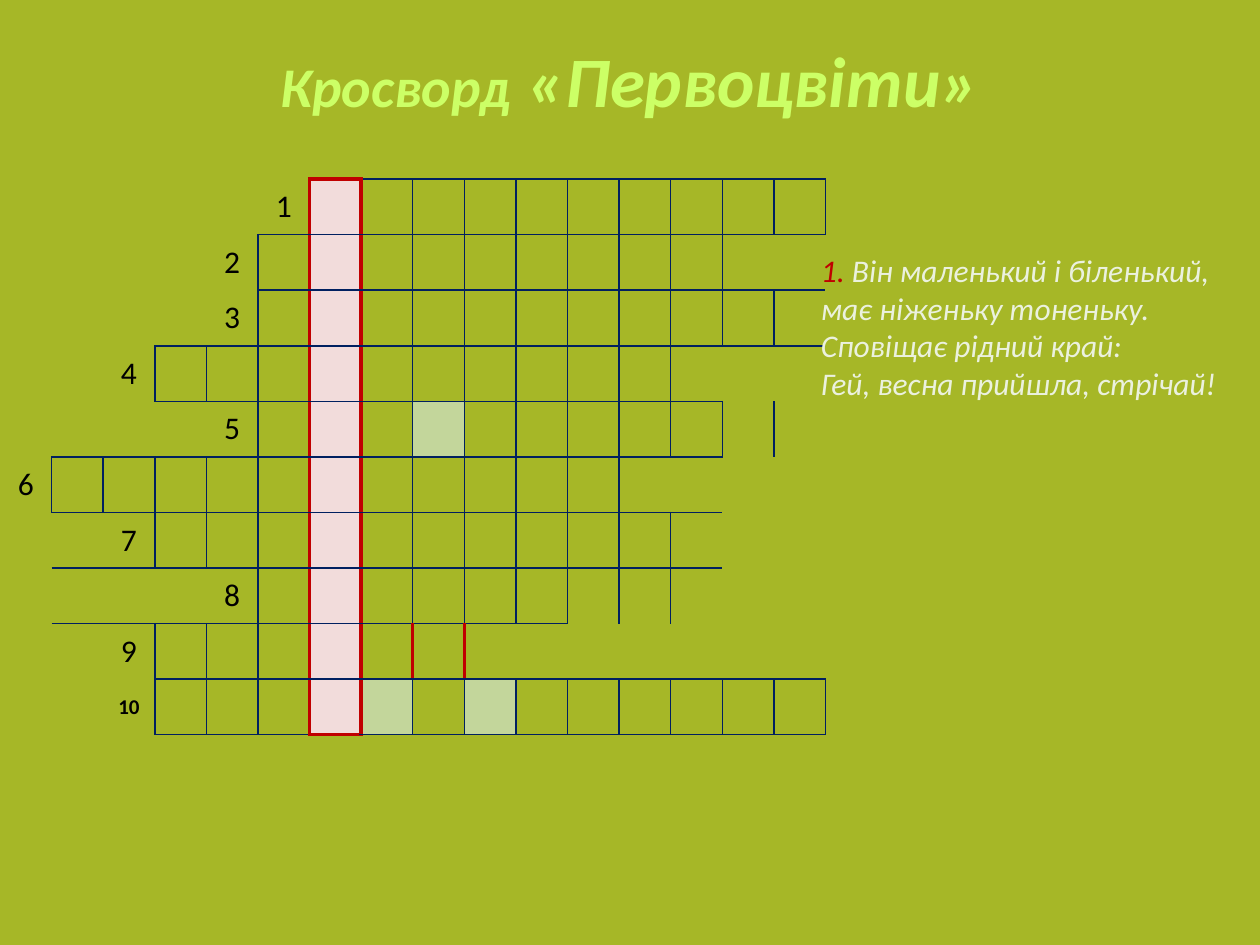
import pptx
import pptx.util
import pptx.dml.color
import pptx.enum.text
import lxml.etree

Cm, Pt = pptx.util.Cm, pptx.util.Pt
ALIGN = pptx.enum.text.PP_ALIGN
ANCHOR = pptx.enum.text.MSO_ANCHOR
NAVY, RED = ("002060", 1), ("C00000", 2.25)
A = "http://schemas.openxmlformats.org/drawingml/2006/main"


def rgb(code):
    return pptx.dml.color.RGBColor.from_string(code)


def style(run, size, code, bold=False, italic=False):
    font = run.font
    font.name, font.size = "Calibri", Pt(size)
    font.bold, font.italic = bold, italic
    font.color.rgb = rgb(code)


deck = pptx.Presentation()
deck.slide_width, deck.slide_height = Cm(25.4), Cm(19.05)
slide = deck.slides.add_slide(deck.slide_layouts[5])
slide.background.fill.solid()
slide.background.fill.fore_color.rgb = rgb("A6B727")

# Crossword: first and last boxed column of each word
words = [(6, 15), (5, 12), (5, 12), (3, 11), (5, 13),
         (1, 10), (3, 10), (5, 10), (3, 7), (3, 15)]
key, cols, rows = 6, 16, len(words)
tints = {(4, 8): "C3D69B", (9, 7): "C3D69B", (9, 9): "C3D69B"}

# Edges: upright by (row, x), level by (y, column)
upright, level = {}, {}
for row, (first, last) in enumerate(words):
    for col in range(first, last + 1):
        level[row, col] = level[row + 1, col] = NAVY
        upright[row, col] = upright[row, col + 1] = NAVY
    upright[row, key] = upright[row, key + 1] = RED
    tints[row, key] = "F2DCDB"
level[0, key] = level[rows, key] = RED

# Loose lines beyond the words
for y, first, last in [(2, 13, 15), (6, 11, 13), (7, 1, 2)]:
    for col in range(first, last + 1):
        level[y, col] = NAVY
for row, x in [(2, 14), (4, 15), (6, 12), (7, 12)]:
    upright[row, x] = NAVY
upright[8, 8] = RED

# Table
table = slide.shapes.add_table(rows, cols, Cm(0), Cm(3.61),
                               Cm(1.04 * cols), Cm(1.12 * rows)).table
table.first_row = table.horz_banding = False
table._tbl.tblPr[0].text = "{2D5ABB26-0587-4C30-8999-92F81FD0307C}"
for col in table.columns:
    col.width = Cm(1.04)
for line in table.rows:
    line.height = Cm(1.12)

for row in range(rows):
    for col in range(cols):
        cell = table.cell(row, col)
        props = cell._tc.get_or_add_tcPr()
        sides = {"lnL": upright.get((row, col)),
                 "lnR": upright.get((row, col + 1)),
                 "lnT": level.get((row, col)),
                 "lnB": level.get((row + 1, col))}
        for tag, pen in sides.items():
            if pen:
                edge = lxml.etree.SubElement(props, f"{{{A}}}{tag}", w=str(Pt(pen[1])))
                fill = lxml.etree.SubElement(edge, f"{{{A}}}solidFill")
                lxml.etree.SubElement(fill, f"{{{A}}}srgbClr", val=pen[0])
        if (row, col) in tints:
            cell.fill.solid()
            cell.fill.fore_color.rgb = rgb(tints[row, col])
        else:
            cell.fill.background()

# Word numbers, just left of each word
for row, (first, last) in enumerate(words):
    cell = table.cell(row, first - 1)
    cell.vertical_anchor = ANCHOR.MIDDLE
    para = cell.text_frame.paragraphs[0]
    para.text = str(row + 1)
    para.alignment = ALIGN.CENTER
    final = row == rows - 1
    style(para.runs[0], 12 if final else 18, "000000", bold=final)

# Title
title = slide.shapes.title
title.left, title.top, title.width, title.height = Cm(1.27), Cm(0.53), Cm(22.86), Cm(3.18)
frame = title.text_frame
frame.vertical_anchor = ANCHOR.TOP
frame.margin_top = Cm(0.2)
para = frame.paragraphs[0]
para.alignment = ALIGN.CENTER
for text, size in [("Кросворд", 32), (" «Первоцвіти»", 40.5)]:
    run = para.add_run()
    run.text = text
    style(run, size, "CCFF66", bold=True, italic=True)

# Clue
box = slide.shapes.add_textbox(Cm(16.3), Cm(4.93), Cm(8.53), Cm(3.33))
box.text_frame.word_wrap = False
para = box.text_frame.paragraphs[0]
para.text = ("Він маленький і біленький,\vмає ніженьку тоненьку.\v"
             "Сповіщає рідний край:\vГей, весна прийшла, стрічай!")
for run in para.runs:
    style(run, 18, "EBF1DE", italic=True)
mark = para.add_run()
mark.text = "1. "
style(mark, 18, "C00000", italic=True)
para._p.insert(para._p.index(para.runs[0]._r), mark._r)

deck.save("out.pptx")
